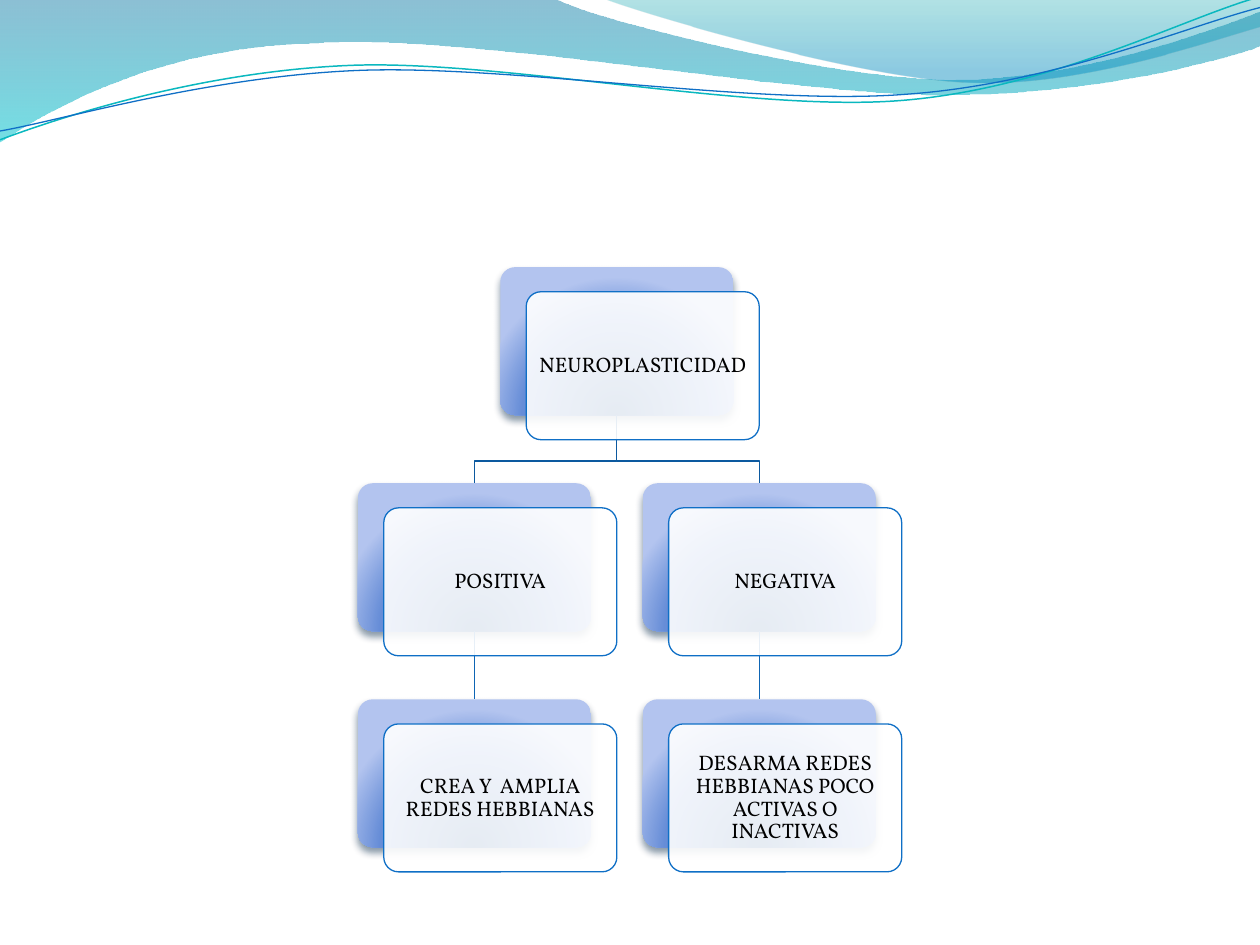
from lxml import etree
from pptx import Presentation
from pptx.dml.color import RGBColor
from pptx.enum.shapes import MSO_CONNECTOR, MSO_SHAPE
from pptx.enum.text import MSO_ANCHOR, PP_ALIGN
from pptx.oxml.ns import qn
from pptx.util import Inches, Pt

ROUNDED = MSO_SHAPE.ROUNDED_RECTANGLE
STRAIGHT = MSO_CONNECTOR.STRAIGHT
MIDDLE = MSO_ANCHOR.MIDDLE
CENTER = PP_ALIGN.CENTER
BOTTOM, TOP = 2, 0

WHITE = RGBColor(0xFF, 0xFF, 0xFF)
BLACK = RGBColor(0x00, 0x00, 0x00)
BLUE = RGBColor(0x0F, 0x6F, 0xC6)
TEAL = RGBColor(0x0A, 0xB8, 0xBF)
UPPER_LINK = RGBColor(0x0C, 0x59, 0x9F)
LOWER_LINK = RGBColor(0x0E, 0x65, 0xB4)
SHADOW = RGBColor(0x04, 0x27, 0x47)
CARD_STOPS = [(0, RGBColor(0x00, 0x3D, 0x87), 100),
              (68, RGBColor(0x66, 0x8D, 0xD7), 100),
              (100, RGBColor(0xB3, 0xC4, 0xEF), 100)]
LEFT_WAVE_STOPS = [(0, RGBColor(0x00, 0x74, 0xA1), 45),
                   (100, RGBColor(0x00, 0xC6, 0xCF), 55)]
RIGHT_WAVE_STOPS = [(0, RGBColor(0x00, 0xA1, 0xA9), 30),
                    (80, RGBColor(0x00, 0x8B, 0xBF), 45)]

CARD_WIDTH = 1.85
CARD_HEIGHT = CARD_WIDTH * 40 / 63
OFFSET_X = CARD_WIDTH / 9
OFFSET_Y = OFFSET_X * 0.95
LEFT_COLUMN = 2.84
RIGHT_COLUMN = LEFT_COLUMN + CARD_WIDTH * 11 / 9
CENTER_COLUMN = (LEFT_COLUMN + RIGHT_COLUMN) / 2
FIRST_ROW, ROW_STEP = 2.12, CARD_HEIGHT * 1.46
BEND_Y = 3.66

LEFT_WAVE = [(0, 0), (4.4, -0.01),
             (4.76, 0.17, 6.64, 0.63, 7.58, 0.63),
             (8.53, 0.63, 9.58, 0.26, 10, 0.09), (10.01, 0.36),
             (9.83, 0.44, 8.7, 0.76, 7.46, 0.75),
             (6.22, 0.75, 3.82, 0.28, 2.57, 0.34),
             (1.29, 0.36, 0.46, 0.83, -0.01, 1.13), (0, 0)]
RIGHT_WAVE = [(4.79, -0.01), (5.09, 0.11, 6.82, 0.62, 7.69, 0.65),
              (8.56, 0.69, 9.61, 0.32, 10, 0.21), (10, 0), (4.79, -0.01)]
TEAL_CURVE = [(0, 1.11), (0.48, 0.93, 1.58, 0.57, 2.77, 0.52),
              (3.95, 0.47, 5.93, 0.89, 7.13, 0.8),
              (8.33, 0.71, 9.38, 0.15, 9.98, -0.02)]
BLUE_CURVE = [(0, 1.04), (0.47, 0.96, 1.64, 0.61, 2.83, 0.56),
              (4.03, 0.51, 5.97, 0.84, 7.17, 0.75),
              (8.36, 0.67, 9.41, 0.21, 10, 0.06)]

CARDS = {
    "root": ("NEUROPLASTICIDAD", CENTER_COLUMN, 0),
    "positive": ("POSITIVA", LEFT_COLUMN, 1),
    "positive result": ("CREA Y  AMPLIA REDES HEBBIANAS", LEFT_COLUMN, 2),
    "negative": ("NEGATIVA", RIGHT_COLUMN, 1),
    "negative result": ("DESARMA REDES HEBBIANAS POCO ACTIVAS O INACTIVAS",
                        RIGHT_COLUMN, 2),
}


def bend_segments(shape, segments):
    outline = next(shape.element.iter(qn("a:path")))
    lines = iter(outline.findall(qn("a:lnTo")))
    for segment in segments:
        line = next(lines)
        if len(segment) == 6:
            line.tag = qn("a:cubicBezTo")
            for control in (next(lines), next(lines)):
                line.append(control[0])
                outline.remove(control)


def add_child(parent, tag, **attributes):
    return etree.SubElement(parent, qn(tag), {key: str(value) for key, value in attributes.items()})


def add_color(parent, color, opacity):
    element = add_child(parent, "a:srgbClr", val=color)
    add_child(element, "a:alpha", val=opacity * 1000)


def fill_gradient(shape, stops, radial=False):
    shape.fill.background()
    properties = shape.element.spPr
    gradient = etree.Element(qn("a:gradFill"), rotWithShape="1")
    stop_list = add_child(gradient, "a:gsLst")
    for position, color, opacity in stops:
        add_color(add_child(stop_list, "a:gs", pos=position * 1000), color, opacity)
    if radial:
        circle = add_child(gradient, "a:path", path="circle")
        add_child(circle, "a:fillToRect", l=50000, t=130000, r=50000, b=-30000)
    else:
        add_child(gradient, "a:lin", ang=5400000, scaled=1)
    properties.replace(properties.find(qn("a:noFill")), gradient)


def write_text(shape, text, font="Vollkorn", size=12, color=BLACK):
    frame = shape.text_frame
    frame.word_wrap = True
    frame.vertical_anchor = MIDDLE
    frame.margin_left = frame.margin_right = Inches(0.05)
    frame.margin_top = frame.margin_bottom = Inches(0.05)
    paragraph = frame.paragraphs[0]
    paragraph.alignment = CENTER
    paragraph.line_spacing = 0.9
    run = paragraph.add_run()
    run.text = text
    run.font.name = font
    run.font.size = Pt(size)
    run.font.color.rgb = color


class DiagramSlide:
    line_width = Pt(0.75)
    corner = 0.1

    def __init__(self, slide):
        self.shapes = slide.shapes

    def outline(self, path, closed):
        points = [(Inches(segment[index]), Inches(segment[index + 1]))
                  for segment in path for index in range(0, len(segment), 2)]
        builder = self.shapes.build_freeform(*points[0])
        builder.add_line_segments(points[1:], close=closed)
        shape = builder.convert_to_shape()
        bend_segments(shape, path[1:])
        shape.shadow.inherit = False
        return shape

    def wave(self, path, stops):
        shape = self.outline(path, True)
        shape.line.fill.background()
        fill_gradient(shape, stops)

    def curve(self, path, color, width=line_width):
        shape = self.outline(path, False)
        shape.fill.background()
        shape.line.color.rgb = color
        shape.line.width = width

    def rounded(self, left, top):
        shape = self.shapes.add_shape(ROUNDED, Inches(left), Inches(top),
                                      Inches(CARD_WIDTH), Inches(CARD_HEIGHT))
        shape.adjustments[0] = self.corner
        shape.shadow.inherit = False
        return shape

    def card_back(self, left, top):
        shape = self.rounded(left, top)
        shape.line.fill.background()
        fill_gradient(shape, CARD_STOPS, radial=True)
        effects = shape.element.spPr.find(qn("a:effectLst"))
        shadow = add_child(effects, "a:outerShdw", blurRad=Pt(4.5), dist=Pt(3),
                           dir=5400000, rotWithShape=0)
        add_color(shadow, SHADOW, 48)
        return shape

    def card_front(self, text, left, top):
        shape = self.rounded(left + OFFSET_X, top + OFFSET_Y)
        shape.fill.solid()
        shape.fill.fore_color.rgb = WHITE
        color = shape.element.spPr.find(qn("a:solidFill"))[0]
        add_child(color, "a:alpha", val=90000)
        shape.line.color.rgb = BLUE
        shape.line.width = self.line_width
        write_text(shape, text)

    def link(self, parent, child):
        connector = self.shapes.add_connector(STRAIGHT, 0, 0, 0, 0)
        connector.begin_connect(parent, BOTTOM)
        connector.end_connect(child, TOP)
        connector.line.color.rgb = LOWER_LINK
        connector.line.width = self.line_width
        add_child(connector.element.spPr, "a:effectLst")


def main():
    presentation = Presentation()
    presentation.slide_width, presentation.slide_height = Inches(10), Inches(7.5)
    diagram = DiagramSlide(presentation.slides.add_slide(presentation.slide_layouts[6]))

    diagram.wave(LEFT_WAVE, LEFT_WAVE_STOPS)
    diagram.wave(RIGHT_WAVE, RIGHT_WAVE_STOPS)
    diagram.curve(TEAL_CURVE, TEAL, Pt(0.85))
    diagram.curve(BLUE_CURVE, BLUE)

    backs = {name: diagram.card_back(left, FIRST_ROW + row * ROW_STEP)
             for name, (text, left, row) in CARDS.items()}
    root_x = CENTER_COLUMN + CARD_WIDTH / 2
    for name, column in (("negative", RIGHT_COLUMN), ("positive", LEFT_COLUMN)):
        child_x = column + CARD_WIDTH / 2
        diagram.curve([(root_x, FIRST_ROW + CARD_HEIGHT), (root_x, BEND_Y),
                       (child_x, BEND_Y), (child_x, FIRST_ROW + ROW_STEP)], UPPER_LINK)
        diagram.link(backs[name], backs[f"{name} result"])
    for text, left, row in CARDS.values():
        diagram.card_front(text, left, FIRST_ROW + row * ROW_STEP)

    presentation.save("out.pptx")


if __name__ == "__main__":
    main()
